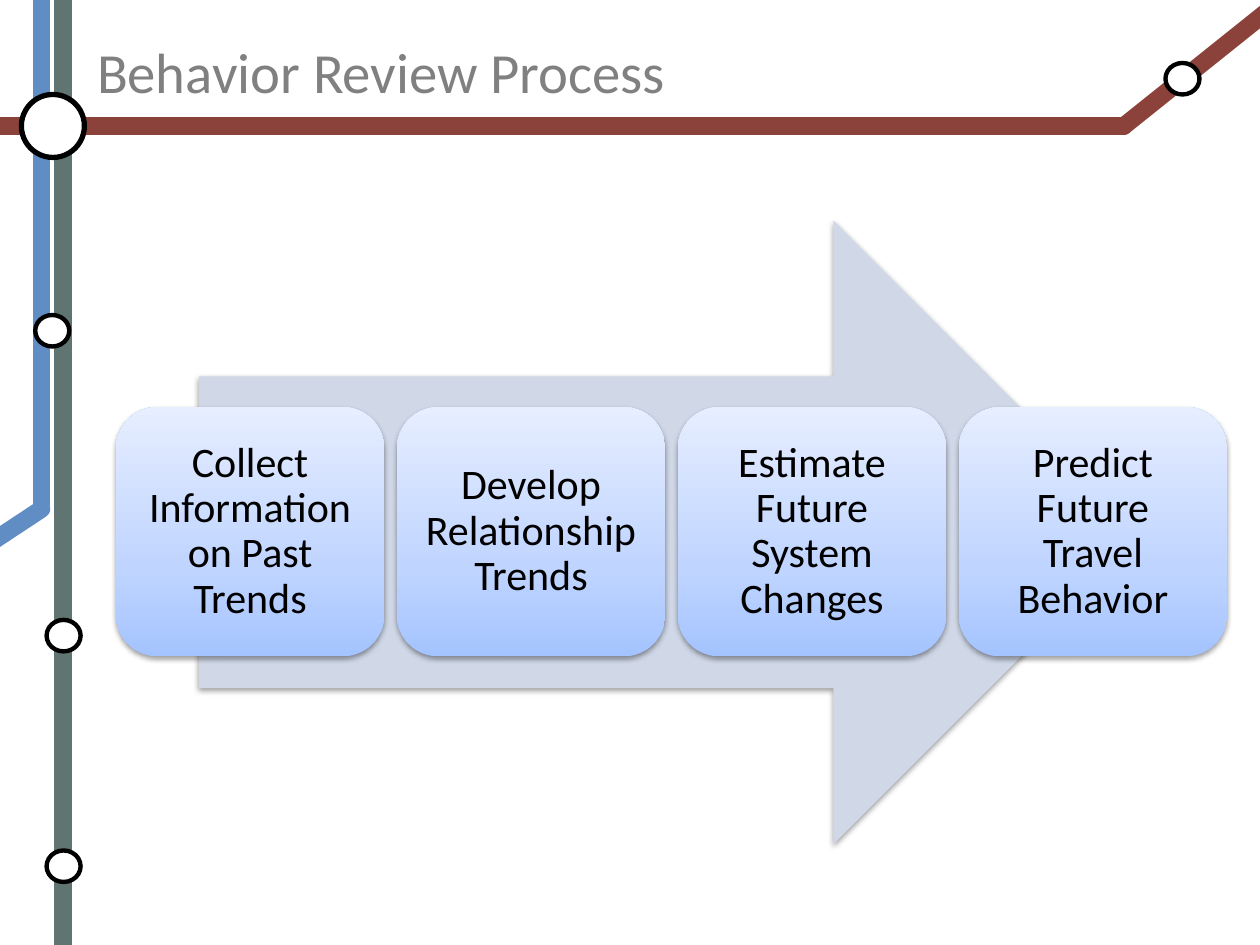
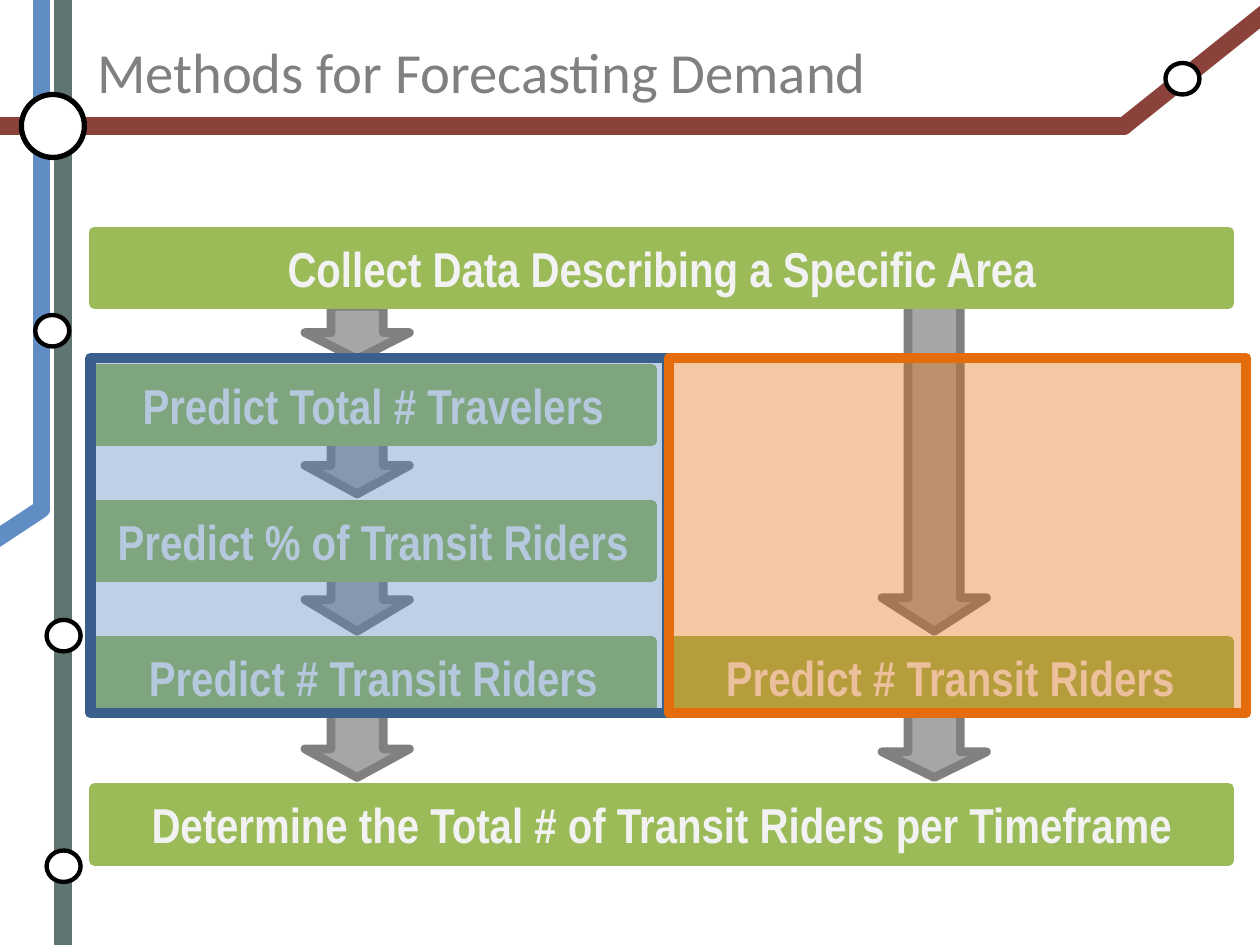
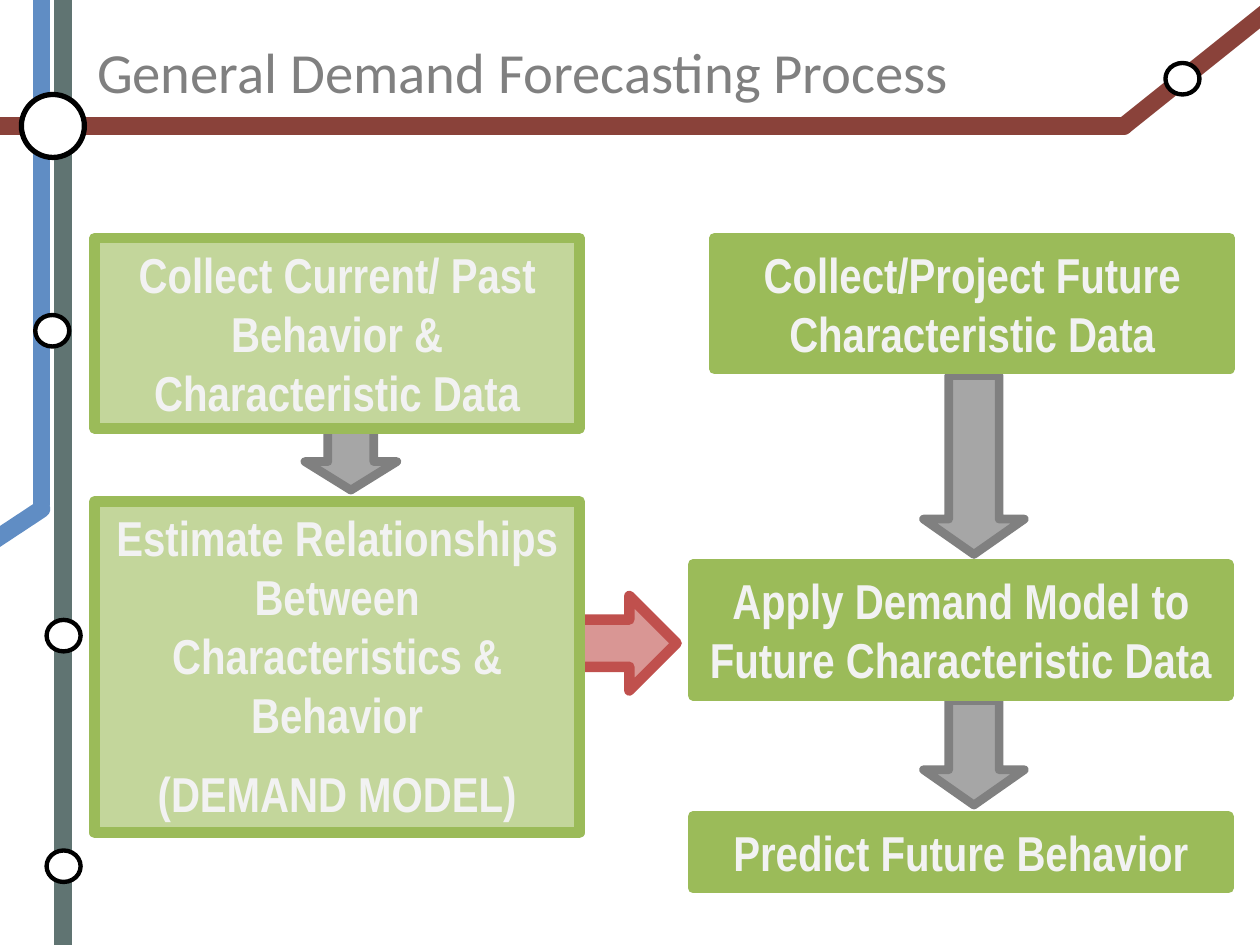
from pptx import Presentation
from pptx.dml.color import RGBColor
from pptx.enum.shapes import MSO_CONNECTOR, MSO_SHAPE
from pptx.enum.text import MSO_ANCHOR, MSO_AUTO_SIZE, PP_ALIGN
from pptx.oxml import parse_xml
from pptx.oxml.ns import nsdecls, qn
from pptx.util import Inches, Pt
from lxml import etree

RECT, ROUND, OVAL = MSO_SHAPE.RECTANGLE, MSO_SHAPE.ROUNDED_RECTANGLE, MSO_SHAPE.OVAL
DOWN, RIGHT = MSO_SHAPE.DOWN_ARROW, MSO_SHAPE.RIGHT_ARROW
STRAIGHT = MSO_CONNECTOR.STRAIGHT
LEFT, CENTER = PP_ALIGN.LEFT, PP_ALIGN.CENTER
TOP, MIDDLE = MSO_ANCHOR.TOP, MSO_ANCHOR.MIDDLE
NO_FIT = MSO_AUTO_SIZE.NONE

WHITE, BLACK, PALE = "FFFFFF", "000000", "F2F2F2"
SLATE, BLUE, RED = "607472", "608DC4", "8A423A"
GRAY, SILVER = "808080", "A6A6A6"
GREEN, LIME = "9BBB59", "C3D69B"
STOPS = [(0, "A4C4FF"), (35, "BFD4FF"), (100, "E6EEFF")]

TRACKS = [
    (0.5, 7.5, 0.5, 0, SLATE),
    (0.33, 4, 0.33, 0, BLUE),
    (0.33, 4.04, -0.17, 4.37, BLUE),
    (0, 1, 8.92, 1, RED),
    (10.17, 0, 8.92, 1, RED),
]
STOPOVERS = [(0.37, 4.92), (0.37, 6.75), (0.28, 2.5), (9.25, 0.5)]
STEPS = [
    "Collect Information on Past Trends",
    "Develop Relationship Trends",
    "Estimate Future System Changes",
    "Predict Future Travel Behavior",
]


def rgb(color):
    """Turn a hex string into a colour."""
    return RGBColor.from_string(color)


def write(shape, text, size=28, font="Arial Narrow", color=PALE, bold=True,
          align=CENTER, anchor=TOP, gap=0, lead=None):
    """Fill a shape with text, one paragraph a line."""
    frame = shape.text_frame
    frame.word_wrap = True
    frame.auto_size = NO_FIT
    frame.vertical_anchor = anchor
    for i, line in enumerate(text.split("\n")):
        para = frame.add_paragraph() if i else frame.paragraphs[0]
        para.alignment = align
        para.space_before = Pt(gap if i else 0)
        para.line_spacing = lead
        run = para.add_run()
        run.text = line
        run.font.name, run.font.size, run.font.bold = font, Pt(size), bold
        run.font.color.rgb = rgb(color)


def draw(slide, kind, place, fill=None, line=None, width=0, alpha=None):
    """Add a preset shape without a shadow."""
    shape = slide.shapes.add_shape(kind, *map(Inches, place))
    shape.shadow.inherit = False
    if fill:
        shape.fill.solid()
        shape.fill.fore_color.rgb = rgb(fill)
    if alpha:
        color = shape.element.spPr.find(".//" + qn("a:srgbClr"))
        etree.SubElement(color, qn("a:alpha"), val=str(alpha * 1000))
    if line:
        shape.line.color.rgb = rgb(line)
        shape.line.width = Pt(width)
    else:
        shape.line.fill.background()
    return shape


def shade(shape):
    """Give a shape a soft shadow below it."""
    shape.element.spPr.find(qn("a:effectLst")).append(parse_xml(
        f'<a:outerShdw {nsdecls("a")} blurRad="40000" dist="20000" dir="5400000" '
        'rotWithShape="0"><a:srgbClr val="000000"><a:alpha val="38000"/>'
        '</a:srgbClr></a:outerShdw>'))


def blend(shape):
    """Fill a shape with the upward blue gradient."""
    stops = "".join(f'<a:gs pos="{pos * 1000}"><a:srgbClr val="{color}"/></a:gs>'
                    for pos, color in STOPS)
    shape.element.spPr.find(qn("a:prstGeom")).addnext(parse_xml(
        f'<a:gradFill {nsdecls("a")} rotWithShape="1"><a:gsLst>{stops}</a:gsLst>'
        '<a:lin ang="16200000" scaled="0"/></a:gradFill>'))


def track(slide, x1, y1, x2, y2, color):
    """Add a thick transit line with round ends."""
    line = slide.shapes.add_connector(STRAIGHT, *map(Inches, (x1, y1, x2, y2)))
    line.line.color.rgb = rgb(color)
    line.line.width = Pt(10)
    line.line._get_or_add_ln().set("cap", "rnd")
    etree.SubElement(line.element.spPr, qn("a:effectLst"))
    return line


def arrow(slide, place, head=0.5, kind=DOWN, fill=SILVER, line=GRAY, width=5):
    """Add a block arrow with a given head length."""
    shape = draw(slide, kind, place, fill, line, width)
    shape.adjustments[1] = head


def box(slide, place, text, fill=GREEN, gap=0):
    """Add a green box with bold text."""
    write(draw(slide, RECT, place, fill, GREEN, 6), text, gap=gap)


def frame(slide, layout):
    """Draw the transit map and move it to the layout."""
    parts = [track(slide, *spec) for spec in TRACKS]
    parts.append(draw(slide, OVAL, (0.17, 0.75, 0.5, 0.5), WHITE, BLACK, 3))
    parts += [draw(slide, OVAL, (x, y, 0.27, 0.25), WHITE, BLACK, 2.5)
              for x, y in STOPOVERS]
    for part in parts:
        layout.shapes.element.append(part.element)


def start(deck, text):
    """Add a slide with its title."""
    slide = deck.slides.add_slide(deck.slide_layouts[5])
    title = slide.shapes.title
    title.left, title.top = Inches(0.67), Inches(0.3)
    title.width, title.height = Inches(8.25), Inches(0.53)
    write(title, text, size=32.4, font="Calibri", color=GRAY, bold=False,
          align=LEFT, anchor=MIDDLE)
    return slide


def review(slide):
    """Lay out the four review steps on one arrow."""
    shade(draw(slide, RIGHT, (1.58, 1.75, 7.51, 4.95), "D0D8E8"))
    for i, step in enumerate(STEPS):
        card = draw(slide, ROUND, (0.92 + 2.23 * i, 3.23, 2.13, 1.98))
        blend(card)
        shade(card)
        text = card.text_frame
        text.margin_top = text.margin_bottom = Inches(0.1)
        write(card, step, size=24, font="Calibri", color=BLACK, bold=False,
              anchor=MIDDLE, lead=0.9)


def methods(slide):
    """Lay out the two ways to forecast demand."""
    near, far = 0.75, 5.33
    for x, y, high, head in [
        (2.42, 3.34, 0.58, 0.39), (2.42, 4.51, 0.5, 0.5),
        (2.42, 5.59, 0.58, 0.39), (7, 5.59, 0.58, 0.35),
        (7, 2.34, 2.67, 0.32), (2.42, 2.43, 0.42, 0.5),
    ]:
        arrow(slide, (x, y, 0.83, high), head)
    for x, y, wide, text in [
        (near, 1.84, 9, "Collect Data Describing a Specific Area"),
        (near, 2.93, 4.42, "Predict Total # Travelers"),
        (near, 4.01, 4.42, "Predict % of Transit Riders"),
        (near, 5.09, 4.42, "Predict # Transit Riders"),
        (far, 5.09, 4.42, "Predict # Transit Riders"),
        (near, 6.26, 9, "Determine the Total # of Transit Riders per Timeframe"),
    ]:
        box(slide, (x, y, wide, 0.57), text)
    for x, fill, line in [(0.72, "4F81BD", "3A5F8C"), (5.31, "E46C0A", "E46C0A")]:
        draw(slide, RECT, (x, 2.84, 4.58, 2.82), fill, line, 6, alpha=37)


def process(slide):
    """Lay out the general forecasting process."""
    arrow(slide, (4.33, 4.73, 1.04, 0.75), kind=RIGHT, fill="D99694",
          line="C0504D", width=6)
    arrow(slide, (7.33, 5.56, 0.8, 0.83), 0.35)
    arrow(slide, (2.42, 3.31, 0.73, 0.58), 0.39)
    arrow(slide, (7.33, 2.98, 0.8, 1.42), 0.35)
    box(slide, (0.75, 1.89, 3.85, 1.51),
        "Collect Current/ Past Behavior & Characteristic Data", LIME)
    box(slide, (0.75, 3.98, 3.85, 2.63),
        "Estimate Relationships Between Characteristics & Behavior\n(DEMAND MODEL)",
        LIME, gap=12)
    box(slide, (5.67, 1.89, 4.09, 1.04), "Collect/Project Future Characteristic Data")
    box(slide, (5.5, 4.48, 4.25, 1.04),
        "Apply Demand Model to Future Characteristic Data")
    box(slide, (5.5, 6.48, 4.25, 0.57), "Predict Future Behavior")


def main():
    """Build and save the deck."""
    deck = Presentation()
    deck.slide_width, deck.slide_height = Inches(10), Inches(7.5)
    first = start(deck, "Behavior Review Process")
    frame(first, deck.slide_layouts[5])
    review(first)
    methods(start(deck, "Methods for Forecasting Demand"))
    process(start(deck, "General Demand Forecasting Process"))
    deck.save("out.pptx")


if __name__ == "__main__":
    main()
